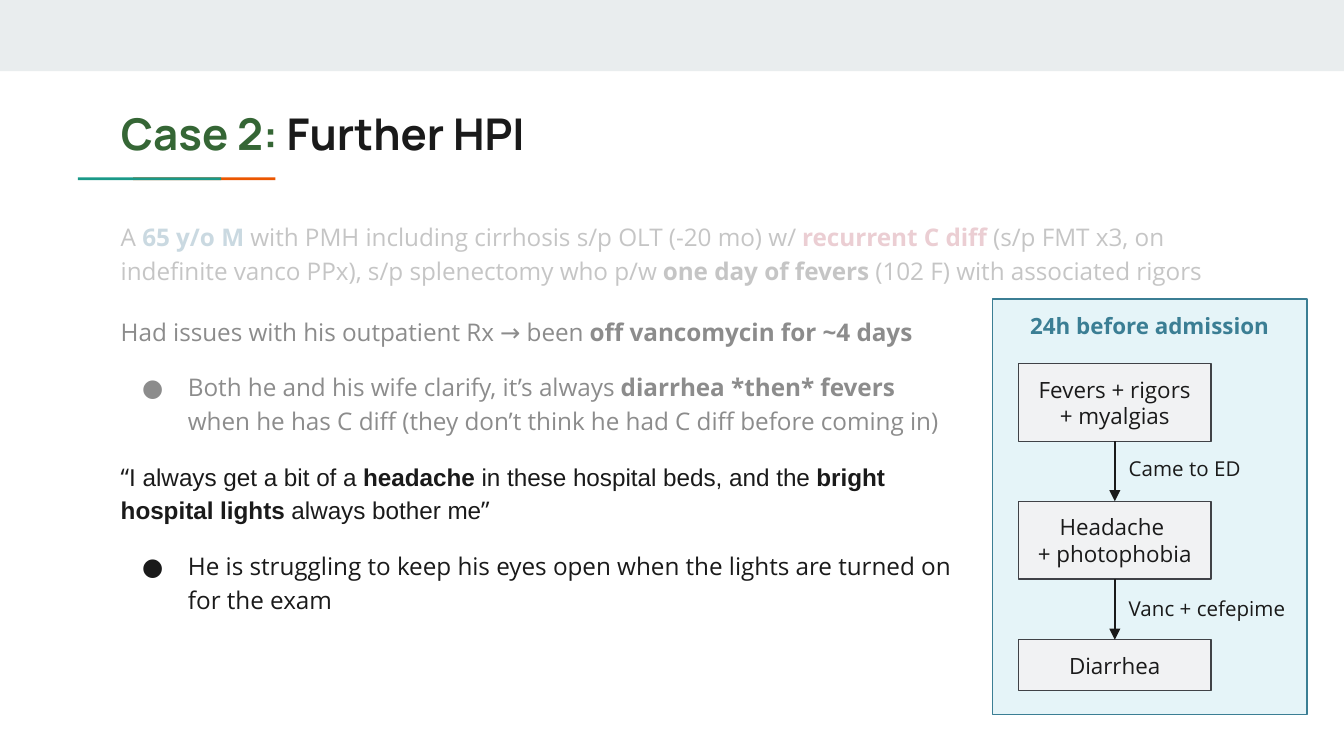
from typing import NamedTuple, Optional

from lxml.etree import SubElement
from pptx import Presentation
from pptx.dml.color import RGBColor
from pptx.enum.shapes import MSO_CONNECTOR, MSO_SHAPE
from pptx.enum.text import MSO_ANCHOR, MSO_AUTO_SIZE, PP_ALIGN
from pptx.oxml.ns import qn
from pptx.util import Emu, Pt

PX = 4572  # EMU per px, 200 px to the inch
COLORS = {
    "ink": "1A1A1A", "white": "FFFFFF", "banner": "E9EDEE",
    "orange": "EB5600", "teal": "1A9988", "green": "356635",
    "age": "2D6987", "infection": "B03D50",
    "panel": "E5F4F8", "panel_line": "3B7E94",
    "step": "F1F2F3", "step_line": "404247",
}


class Box(NamedTuple):
    left: int
    top: int
    width: int
    height: int


class Span(NamedTuple):
    text: str
    bold: bool = False
    color: str = "ink"
    font: str = "Open Sans"


class Para(NamedTuple):
    spans: list[Span]
    bullet: bool = False


class Step(NamedTuple):
    lines: list[str]
    top: int
    height: int


def px(value: int) -> Emu:
    return Emu(value * PX)


def rgb(name: str) -> RGBColor:
    return RGBColor.from_string(COLORS[name])


def place(shape, box: Box) -> None:
    shape.left, shape.top, shape.width, shape.height = map(px, box)


def add_bullet(paragraph) -> None:
    properties = paragraph._p.get_or_add_pPr()
    properties.set("marL", str(px(100)))
    properties.set("indent", str(px(-68)))
    bullet_color = SubElement(properties, qn("a:buClr"))
    SubElement(bullet_color, qn("a:srgbClr"), val=COLORS["ink"])
    SubElement(properties, qn("a:buFont"), typeface="Open Sans")
    SubElement(properties, qn("a:buChar"), char="●")


def write(shape, paras: list[Para], size: float, align=PP_ALIGN.LEFT,
          anchor=MSO_ANCHOR.TOP, spacing: float = 1.0, gap: int = 0) -> None:
    frame = shape.text_frame
    frame.word_wrap = True
    frame.auto_size = MSO_AUTO_SIZE.NONE
    frame.vertical_anchor = anchor
    frame.margin_left = frame.margin_right = px(20)
    frame.margin_top = frame.margin_bottom = px(20)
    for index, para in enumerate(paras):
        paragraph = frame.add_paragraph() if index else frame.paragraphs[0]
        paragraph.alignment = align
        paragraph.line_spacing = spacing
        paragraph.space_before = Pt(gap if index else 0)
        if para.bullet:
            add_bullet(paragraph)
        for span in para.spans:
            run = paragraph.add_run()
            run.text = span.text
            run.font.name = span.font
            run.font.size = Pt(size)
            run.font.bold = span.bold
            run.font.color.rgb = rgb(span.color)


def add_rect(slide, box: Box, fill: str, line: Optional[str] = None,
             opacity: int = 100):
    rect = slide.shapes.add_shape(MSO_SHAPE.RECTANGLE, *map(px, box))
    rect.shadow.inherit = False
    rect.fill.solid()
    rect.fill.fore_color.rgb = rgb(fill)
    if opacity < 100:
        color = rect._element.spPr.find(qn("a:solidFill"))[0]
        SubElement(color, qn("a:alpha"), val=str(opacity * 1000))
    if line:
        rect.line.color.rgb = rgb(line)
        rect.line.width = Pt(0.75)
    else:
        rect.line.fill.background()
    return rect


def add_text(slide, box: Box, paras: list[Para], size: float,
             spacing: float = 1.0, gap: int = 0) -> None:
    text_box = slide.shapes.add_textbox(*map(px, box))
    write(text_box, paras, size, spacing=spacing, gap=gap)


def add_step(slide, step: Step):
    rect = add_rect(slide, Box(1516, step.top, 286, step.height),
                    "step", "step_line")
    write(rect, [Para([Span(line)]) for line in step.lines], 12,
          PP_ALIGN.CENTER, MSO_ANCHOR.MIDDLE)
    return rect


def add_arrow(slide, upper, lower) -> None:
    arrow = slide.shapes.add_connector(MSO_CONNECTOR.STRAIGHT, 0, 0, 0, 0)
    arrow.begin_connect(upper, 2)
    arrow.end_connect(lower, 0)
    arrow.line.color.rgb = rgb("ink")
    arrow.line.width = Pt(0.75)
    SubElement(arrow.line._get_or_add_ln(), qn("a:tailEnd"), type="triangle")
    SubElement(arrow._element.spPr, qn("a:effectLst"))


SUMMARY = [Para([
    Span("A "), Span("65 y/o M", True, "age"),
    Span(" with PMH including cirrhosis s/p OLT (-20 mo) w/ "),
    Span("recurrent C diff", True, "infection"),
    Span(" (s/p FMT x3, on indefinite vanco PPx), s/p splenectomy who p/w "),
    Span("one day of fevers", True),
    Span(" (102 F) with associated rigors"),
])]

HISTORY = [
    Para([Span("Had issues with his outpatient Rx → been "),
          Span("off vancomycin for ~4 days", True)]),
    Para([Span("Both he and his wife clarify, it’s always "),
          Span("diarrhea *then* fevers", True),
          Span(" when he has C diff (they don’t think he had C diff "
               "before coming in)")], bullet=True),
    Para([Span("“"),
          Span("I always get a bit of a ", font="Arial"),
          Span("headache", True, font="Arial"),
          Span(" in these hospital beds, and the ", font="Arial"),
          Span("bright hospital lights", True, font="Arial"),
          Span(" always bother me", font="Arial"),
          Span("”")]),
    Para([Span("He is struggling to keep his eyes open when the lights are "
               "turned on for the exam")], bullet=True),
]

STEPS = [
    Step(["Fevers + rigors + myalgias"], 541, 116),
    Step(["Headache ", "+ photophobia"], 746, 116),
    Step(["Diarrhea"], 952, 76),
]
EVENTS = {"Came to ED": 658, "Vanc + cefepime": 867}
SUMMARY_VEIL = Box(160, 292, 1700, 140)
HISTORY_VEIL = Box(160, 444, 1270, 212)


def main() -> None:
    deck = Presentation()
    deck.slide_width, deck.slide_height = px(2000), px(1125)
    slide = deck.slides.add_slide(deck.slide_layouts[5])

    # Banner and two-colour rule under the title
    add_rect(slide, Box(0, 0, 2000, 106), "banner")
    add_rect(slide, Box(198, 264, 212, 4), "orange")
    add_rect(slide, Box(116, 264, 213, 4), "teal")

    # Title
    title = slide.shapes.title
    place(title, Box(160, 139, 1682, 118))
    write(title, [Para([Span("Case 2:", True, "green", "Manrope"),
                        Span(" Further HPI", True, font="Manrope")])], 23.4)

    # Case text
    add_text(slide, Box(160, 305, 1682, 140), SUMMARY, 13, spacing=1.15)
    add_text(slide, Box(160, 445, 1290, 514), HISTORY, 13, spacing=1.15,
             gap=12)

    # Timeline panel
    panel = add_rect(slide, Box(1477, 445, 468, 618), "panel", "panel_line")
    write(panel, [Para([Span("24h before admission", True, "panel_line")])],
          12, PP_ALIGN.CENTER)
    steps = [add_step(slide, step) for step in STEPS]
    for upper, lower in zip(steps, steps[1:]):
        add_arrow(slide, upper, lower)
    for event, top in EVENTS.items():
        add_text(slide, Box(1660, top, 286, 78), [Para([Span(event)])], 11)

    # Veils that fade the earlier text, the summary twice
    for veil in (SUMMARY_VEIL, SUMMARY_VEIL, HISTORY_VEIL):
        add_rect(slide, veil, "white", opacity=50)

    deck.save("out.pptx")


if __name__ == "__main__":
    main()
